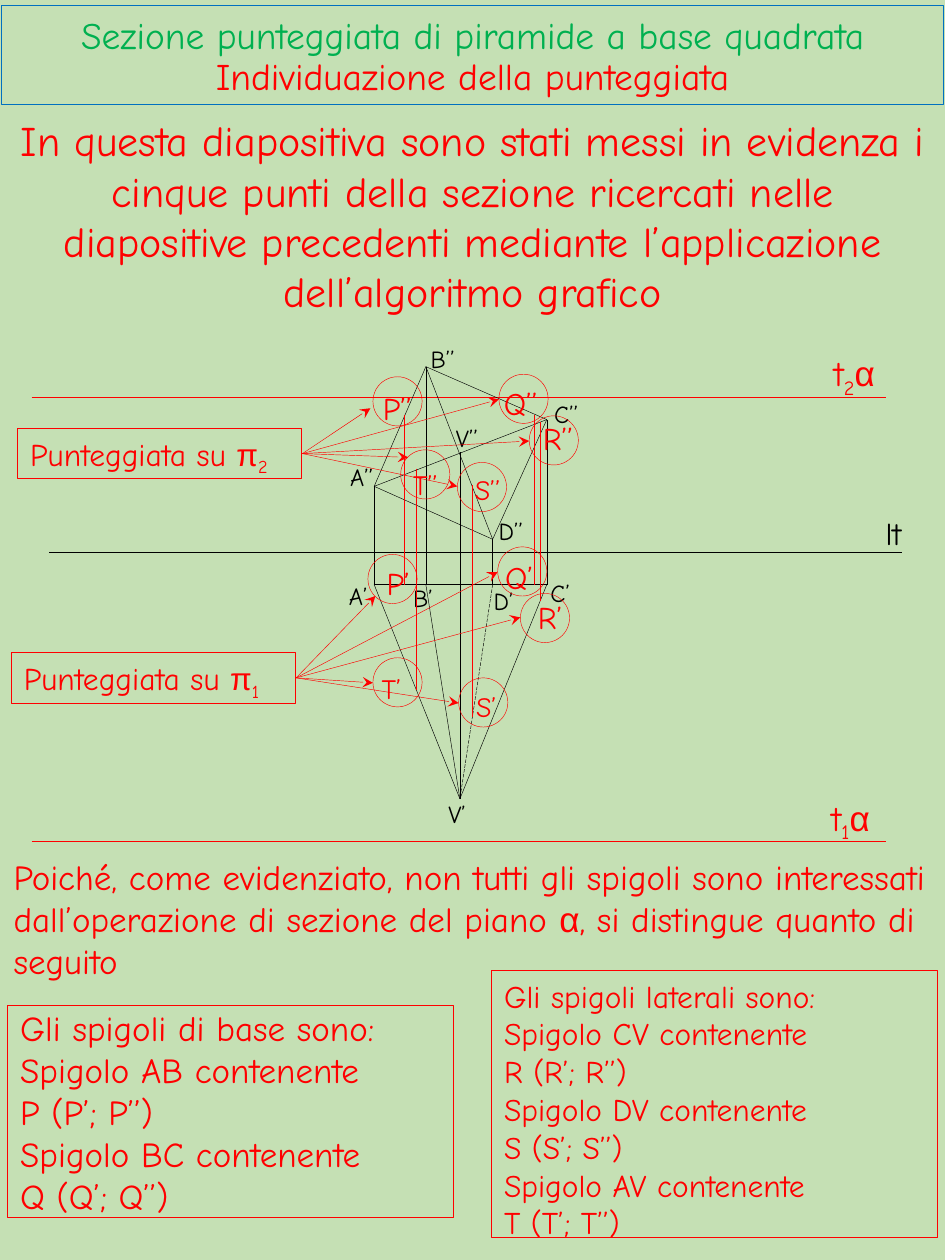
from lxml.etree import SubElement
from pptx import Presentation
from pptx.dml.color import RGBColor
from pptx.enum.dml import MSO_LINE
from pptx.enum.shapes import MSO_CONNECTOR, MSO_SHAPE
from pptx.enum.text import MSO_ANCHOR, MSO_AUTO_SIZE, PP_ALIGN
from pptx.oxml.ns import qn
from pptx.util import Inches, Pt

COLORS = {"red": "FF0000", "black": "000000", "green": "00B050",
          "blue": "0070C0", "background": "C5E0B4"}
FONT, GREEK_FONT = "Comic Neue", "Arial"
CIRCLE_SIZE = 0.39

VERTICES = {
    "A’’": (2.97, 3.86), "B’’": (3.38, 2.91), "C’’": (4.34, 3.33),
    "D’’": (3.91, 4.28), "V’’": (3.65, 3.59),
    "A’": (2.97, 4.64), "B’": (3.38, 4.64), "C’": (4.34, 4.64),
    "D’": (3.91, 4.64), "V’": (3.65, 6.34),
}
EDGES = [("A’’", "B’’"), ("B’’", "C’’"), ("C’’", "D’’"), ("D’’", "A’’"),
         ("A’’", "C’’"), ("B’’", "D’’"), ("A’", "C’"),
         ("A’", "V’"), ("B’", "V’"), ("C’", "V’")]
VERTEX_LABELS = [
    ("A’’", 2.68, 3.62), ("A’", 2.67, 4.56), ("B’’", 3.32, 2.68),
    ("B’", 3.18, 4.58), ("C’’", 4.3, 3.12), ("C’", 4.27, 4.54),
    ("D’’", 3.86, 4.05), ("D’", 3.82, 4.6), ("V’’", 3.52, 3.31),
    ("V’", 3.46, 6.29),
]
PROJECTIONS = [(3.21, 3.29, 4.64), (4.24, 3.29, 4.64), (4.29, 3.35, 4.77),
               (3.75, 3.85, 5.69), (3.3, 3.72, 5.48)]

# name, label area, text size, circle corner, arrow tip
SECTIONS = {
    "2": ((0.14, 3.4), (2.4, 3.6), [
        ("P’’", (2.94, 3.12, 0.43, 0.24), 18, (2.96, 2.99), (2.94, 3.24)),
        ("Q’’", (3.9, 3.04, 0.51, 0.31), 18, (3.96, 2.97), (3.96, 3.17)),
        ("R’’", (4.21, 3.28, 0.47, 0.39), 18, (4.2, 3.3), (4.2, 3.5)),
        ("T’’", (3.18, 3.66, 0.43, 0.37), 16, (3.18, 3.57), (3.24, 3.63)),
        ("S’’", (3.67, 3.7, 0.47, 0.37), 16, (3.63, 3.67), (3.63, 3.86)),
    ]),
    "1": ((0.09, 5.18), (2.35, 5.38), [
        ("P’", (2.97, 4.43, 0.43, 0.4), 18, (2.92, 4.4), (2.98, 4.73)),
        ("Q’", (3.91, 4.38, 0.51, 0.4), 18, (3.95, 4.34), (3.95, 4.54)),
        ("R’", (4.17, 4.7, 0.43, 0.4), 18, (4.13, 4.71), (4.13, 4.9)),
        ("T’", (2.93, 5.28, 0.39, 0.37), 16, (2.96, 5.22), (2.96, 5.42)),
        ("S’", (3.68, 5.42, 0.47, 0.37), 16, (3.64, 5.38), (3.64, 5.58)),
    ]),
}
BASE_EDGES = ["Gli spigoli di base sono:", "Spigolo AB contenente", "P (P’; P’’)",
              "Spigolo BC contenente", "Q (Q’; Q’’)"]
LATERAL_EDGES = ["Gli spigoli laterali sono:", "Spigolo CV contenente", "R (R’; R’’)",
                 "Spigolo DV contenente", "S (S’; S’’)",
                 "Spigolo AV contenente", "T (T’; T’’)"]


def rgb(color):
    return RGBColor.from_string(COLORS[color])


def outline(element, color):
    element.line.color.rgb = rgb(color)
    element.line.width = Pt(0.25)


def place(box, area):
    box.left, box.top, box.width, box.height = map(Inches, area)


def write_span(para, text, color="red", greek=False, subscript=False):
    span = para.add_run()
    span.text = text
    span.font.color.rgb = rgb(color)
    if greek:
        span.font.name = GREEK_FONT
    if subscript:
        span.font._element.set("baseline", "-25000")


def format_para(para, size, align=PP_ALIGN.LEFT):
    para.font.name = FONT
    para.font.size = Pt(size)
    para.alignment = align
    para.space_before = Pt(0)


def format_frame(box, anchor):
    frame = box.text_frame
    frame.word_wrap = True
    frame.auto_size = MSO_AUTO_SIZE.SHAPE_TO_FIT_TEXT
    frame.vertical_anchor = anchor
    return frame


def add_text(page, area, size, spans, anchor=MSO_ANCHOR.TOP, align=PP_ALIGN.LEFT):
    box = page.shapes.add_textbox(*map(Inches, area))
    para = format_frame(box, anchor).paragraphs[0]
    format_para(para, size, align)
    for span in spans:
        write_span(para, **span)


def add_outlined_shape(page, kind, area):
    shape = page.shapes.add_shape(kind, *map(Inches, area))
    shape.shadow.inherit = False
    shape.fill.background()
    outline(shape, "red")
    return shape


def add_line(page, start, end, color="black", dashed=False, arrow=False):
    line = page.shapes.add_connector(MSO_CONNECTOR.STRAIGHT, *map(Inches, start + end))
    outline(line, color)
    if dashed:
        line.line.dash_style = MSO_LINE.LONG_DASH
    if arrow:
        SubElement(line.line._get_or_add_ln(), qn("a:tailEnd"), type="stealth")
    SubElement(line._element.spPr, qn("a:effectLst"))


def fill_title(page):
    title = page.shapes.title
    place(title, (0.01, 0.04, 7.48, 0.79))
    outline(title, "blue")
    title.text_frame.word_wrap = True
    title.text_frame.vertical_anchor = MSO_ANCHOR.BOTTOM
    para = title.text_frame.paragraphs[0]
    format_para(para, 21.4, PP_ALIGN.CENTER)
    para.line_spacing = 0.9
    write_span(para, "Sezione punteggiata di piramide a base quadrata ", "green")
    write_span(para, "Individuazione della punteggiata")


def fill_list(box, area, size, lines, anchor):
    place(box, area)
    outline(box, "red")
    frame = format_frame(box, anchor)
    for index, text in enumerate(lines):
        para = frame.add_paragraph() if index else frame.paragraphs[0]
        format_para(para, size)
        properties = para._p.get_or_add_pPr()
        properties.set("marL", "0")
        properties.set("indent", "0")
        properties.insert_element_before(
            properties.makeelement(qn("a:buNone"), {}), "a:tabLst", "a:defRPr", "a:extLst")
        write_span(para, text)


def draw_pyramid(page):
    for start, end in EDGES:
        add_line(page, VERTICES[start], VERTICES[end])
    for letter in "ABCDV":
        add_line(page, VERTICES[letter + "’’"], VERTICES[letter + "’"])
    add_line(page, VERTICES["D’"], VERTICES["V’"], dashed=True)
    for name, left, top in VERTEX_LABELS:
        add_text(page, (left, top, 0.51, 0.34), 14, [dict(text=name, color="black")])


def draw_plane(page):
    add_line(page, (0.39, 4.38), (7.16, 4.38))
    add_text(page, (6.93, 4.03, 0.57, 0.4), 18, [dict(text="lt", color="black")])
    for number, left, top, level in (("2", 6.52, 2.74, 3.15), ("1", 6.5, 6.27, 6.68)):
        add_line(page, (0.25, level), (7.03, level), "red")
        add_text(page, (left, top, 0.65, 0.44), 20,
                 [dict(text="t"), dict(text=number, subscript=True),
                  dict(text="α", greek=True)])


def draw_section(page, number, corner, source, points):
    box = add_outlined_shape(page, MSO_SHAPE.RECTANGLE, corner + (2.25, 0.4))
    para = format_frame(box, MSO_ANCHOR.TOP).paragraphs[0]
    format_para(para, 18)
    write_span(para, "Punteggiata su ")
    write_span(para, "π", greek=True)
    write_span(para, number, subscript=True)
    for name, area, size, circle, tip in points:
        add_text(page, area, size, [dict(text=name)], MSO_ANCHOR.MIDDLE)
        add_outlined_shape(page, MSO_SHAPE.OVAL, circle + (CIRCLE_SIZE, CIRCLE_SIZE))
        add_line(page, source, tip, "red", arrow=True)


def main():
    deck = Presentation()
    deck.slide_width, deck.slide_height = Inches(7.5), Inches(10)
    page = deck.slides.add_slide(deck.slide_layouts[3])
    page.background.fill.solid()
    page.background.fill.fore_color.rgb = rgb("background")

    fill_title(page)
    fill_list(page.placeholders[1], (0.06, 7.93, 3.54, 1.78), 20, BASE_EDGES,
              MSO_ANCHOR.MIDDLE)
    fill_list(page.placeholders[2], (3.9, 7.7, 3.54, 2.22), 18, LATERAL_EDGES,
              MSO_ANCHOR.TOP)
    add_text(page, (0.01, 0.85, 7.48, 1.72), 24, [dict(
        text="In questa diapositiva sono stati messi in evidenza i cinque punti della "
             "sezione ricercati nelle diapositive precedenti mediante l’applicazione "
             "dell’algoritmo grafico")], MSO_ANCHOR.MIDDLE, PP_ALIGN.CENTER)
    add_text(page, (0.01, 6.74, 7.47, 1.11), 20, [
        dict(text="Poiché, come evidenziato, non tutti gli spigoli sono interessati "
                  "dall’operazione di sezione del piano "),
        dict(text="α", greek=True),
        dict(text=", si distingue quanto di seguito")])
    draw_plane(page)
    draw_pyramid(page)
    for left, top, bottom in PROJECTIONS:
        add_line(page, (left, top), (left, bottom), "red")
    for number, section in SECTIONS.items():
        draw_section(page, number, *section)
    deck.save("out.pptx")


if __name__ == "__main__":
    main()
